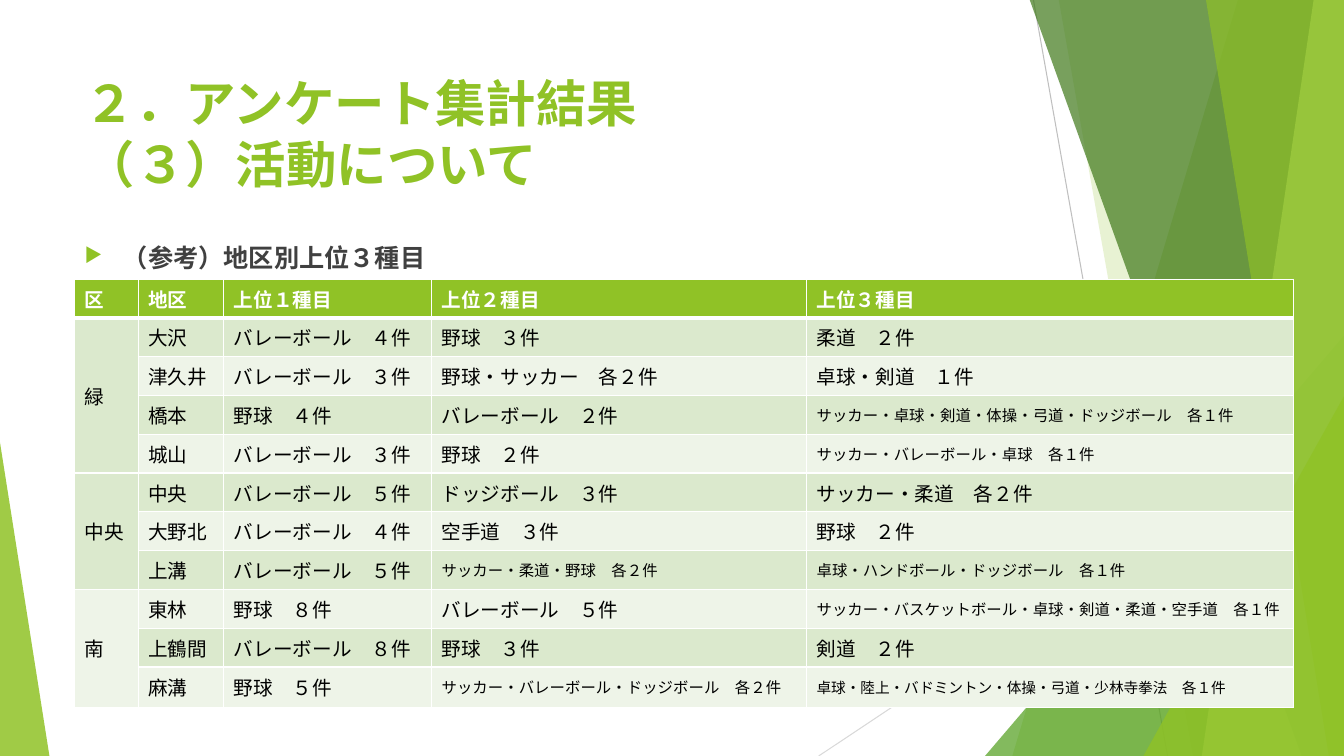
"""Builds the survey slide listing the top three sports of each district."""
from dataclasses import dataclass

from lxml.etree import SubElement
from pptx import Presentation
from pptx.dml.color import RGBColor
from pptx.enum.shapes import MSO_CONNECTOR, MSO_SHAPE
from pptx.enum.text import MSO_ANCHOR, MSO_AUTO_SIZE, PP_ALIGN
from pptx.oxml.ns import qn
from pptx.util import Inches, Pt


@dataclass(frozen=True)
class Theme:
    font: str = "Lato"
    green: str = "90C226"
    leaf: str = "54A021"
    forest: str = "3F7819"
    lime: str = "C0E474"
    white: str = "FFFFFF"
    black: str = "000000"
    ink: str = "404040"
    wire: str = "BFBFBF"
    mist: str = "D9D9D9"
    bands: tuple = ("EEF4E8", "DBE9CD")
    title: float = 36
    lead: float = 18
    cell: float = 14
    small: float = 11
    tiny: float = 10.5


class Deck:
    def __init__(self, theme):
        self.theme = theme
        self.file = Presentation()
        self.file.slide_width = Inches(13.33)
        self.file.slide_height = Inches(7.5)
        self.slide = self.file.slides.add_slide(self.file.slide_layouts[5])
        self.shapes = self.slide.shapes

    def style(self, para, size, color, bold=False):
        font = para.font
        font.name = self.theme.font
        font.size = Pt(size)
        font.bold = bold
        font.color.rgb = RGBColor.from_string(color)

    def paint(self, shape, color, alpha):
        shape.shadow.inherit = False
        shape.line.fill.background()
        shape.fill.solid()
        shape.fill.fore_color.rgb = RGBColor.from_string(color)
        tint = shape.fill._xPr.find(qn("a:solidFill"))[0]
        SubElement(tint, qn("a:alpha"), val=str(alpha * 1000))

    def line(self, start, end, color):
        ends = [Inches(v) for v in (*start, *end)]
        line = self.shapes.add_connector(MSO_CONNECTOR.STRAIGHT, *ends)
        line.line.width = Pt(0.75)
        line.line.color.rgb = RGBColor.from_string(color)
        SubElement(line._element.spPr, qn("a:effectLst"))

    def shard(self, top, foot, color, alpha):
        spots = [(top, -0.01), (13.33, -0.01), (13.33, 7.5), (foot, 7.5)]
        spots = [(Inches(x), Inches(y)) for x, y in spots]
        pen = self.shapes.build_freeform(*spots[0], scale=1.0)
        pen.add_line_segments(spots[1:], close=True)
        self.paint(pen.convert_to_shape(), color, alpha)

    def wedge(self, left, top, width, tip, color, alpha):
        box = [Inches(v) for v in (left, top, width, 7.5 - top)]
        shape = self.shapes.add_shape(MSO_SHAPE.ISOSCELES_TRIANGLE, *box)
        shape.adjustments[0] = tip
        self.paint(shape, color, alpha)

    def title(self, text, left, top, width, height):
        box = self.shapes.title
        box.left, box.top = Inches(left), Inches(top)
        box.width, box.height = Inches(width), Inches(height)
        frame = box.text_frame
        frame.auto_size = MSO_AUTO_SIZE.NONE
        frame.vertical_anchor = MSO_ANCHOR.TOP
        para = frame.paragraphs[0]
        para.text = text
        para.alignment = PP_ALIGN.LEFT
        self.style(para, self.theme.title, self.theme.green, True)

    def bullet(self, text, left, top, width, height):
        box = [Inches(v) for v in (left, top, width, height)]
        frame = self.shapes.add_textbox(*box).text_frame
        frame.word_wrap = True
        para = frame.paragraphs[0]
        para.text = text
        para.space_before = Pt(10)
        props = para._p.get_or_add_pPr()
        props.set("marL", str(Inches(0.38)))
        props.set("indent", str(Inches(-0.38)))
        tint = SubElement(props, qn("a:buClr"))
        SubElement(tint, qn("a:srgbClr"), val=self.theme.green)
        SubElement(props, qn("a:buSzPct"), val="80000")
        SubElement(props, qn("a:buChar"), char="▶")
        self.style(para, self.theme.lead, self.theme.ink, True)

    def edge(self, cell, row):
        props = cell._tc.get_or_add_tcPr()
        for side in "LRTB":
            thick = (row, side) in ((0, "B"), (1, "T"))
            line = SubElement(props, qn(f"a:ln{side}"), w=str(Pt(3 if thick else 1)))
            fill = SubElement(line, qn("a:solidFill"))
            SubElement(fill, qn("a:srgbClr"), val=self.theme.white)

    def cell(self, cell, row, text, size):
        look = self.theme
        head = row == 0
        self.edge(cell, row)
        cell.fill.solid()
        fill = look.green if head else look.bands[row % 2]
        cell.fill.fore_color.rgb = RGBColor.from_string(fill)
        cell.vertical_anchor = MSO_ANCHOR.MIDDLE
        para = cell.text_frame.paragraphs[0]
        para.text = text
        self.style(para, size, look.white if head else look.black, head)

    def table(self, head, wards, left, top, widths, tall, last):
        look = self.theme
        rows = [head]
        spans = []
        for ward, items in wards.items():
            spans.append((len(rows), len(items)))
            rows += [(ward if i == 0 else "", *item) for i, item in enumerate(items)]
        high = tall * (len(rows) - 1) + last
        box = [Inches(v) for v in (left, top, sum(widths), high)]
        grid = self.shapes.add_table(len(rows), len(head), *box).table
        for col, width in zip(grid.columns, widths):
            col.width = Inches(width)
        for line in grid.rows:
            line.height = Inches(tall)
        grid.rows[len(rows) - 1].height = Inches(last)
        for r, texts in enumerate(rows):
            for c, text in enumerate(texts):
                size = look.small if len(text) > 12 else look.cell
                self.cell(grid.cell(r, c), r, text, size)
        final = grid.cell(len(rows) - 1, len(head) - 1)
        final.text_frame.paragraphs[0].font.size = Pt(look.tiny)
        for start, count in spans:
            grid.cell(start, 0).merge(grid.cell(start + count - 1, 0))


HEAD = ("区", "地区", "上位１種目", "上位２種目", "上位３種目")
WARDS = {
    "緑": [
        ("大沢", "バレーボール　４件", "野球　３件", "柔道　２件"),
        ("津久井", "バレーボール　３件", "野球・サッカー　各２件", "卓球・剣道　１件"),
        ("橋本", "野球　４件", "バレーボール　２件",
         "サッカー・卓球・剣道・体操・弓道・ドッジボール　各１件"),
        ("城山", "バレーボール　３件", "野球　２件", "サッカー・バレーボール・卓球　各１件"),
    ],
    "中央": [
        ("中央", "バレーボール　５件", "ドッジボール　３件", "サッカー・柔道　各２件"),
        ("大野北", "バレーボール　４件", "空手道　３件", "野球　２件"),
        ("上溝", "バレーボール　５件", "サッカー・柔道・野球　各２件",
         "卓球・ハンドボール・ドッジボール　各１件"),
    ],
    "南": [
        ("東林", "野球　８件", "バレーボール　５件",
         "サッカー・バスケットボール・卓球・剣道・柔道・空手道　各１件"),
        ("上鶴間", "バレーボール　８件", "野球　３件", "剣道　２件"),
        ("麻溝", "野球　５件", "サッカー・バレーボール・ドッジボール　各２件",
         "卓球・陸上・バドミントン・体操・弓道・少林寺拳法　各１件"),
    ],
}


def main():
    look = Theme()
    deck = Deck(look)
    deck.line((10.25, 0), (11.58, 7.5), look.wire)
    deck.line((13.33, 4.03), (8.12, 7.5), look.mist)
    deck.shard(12.28, 10.04, look.green, 30)
    deck.shard(10.5, 11.83, look.green, 20)
    deck.wedge(9.77, 3.33, 3.56, 1, look.leaf, 72)
    deck.shard(10.21, 12.91, look.forest, 70)
    deck.shard(13.03, 11.92, look.lime, 70)
    deck.shard(11.96, 13.18, look.green, 65)
    deck.wedge(11.34, 3.93, 1.99, 1, look.green, 80)
    deck.wedge(0, 4.39, 0.49, 0, look.green, 85)
    deck.title("２．アンケート集計結果\v（３）活動について", 0.74, 0.67, 9.4, 1.44)
    deck.bullet("（参考）地区別上位３種目", 0.74, 2.36, 9.4, 4.24)
    deck.table(HEAD, WARDS, 0.74, 2.77, (0.63, 0.85, 2.06, 3.72, 4.83), 0.385, 0.4)
    deck.file.save("out.pptx")


if __name__ == "__main__":
    main()
